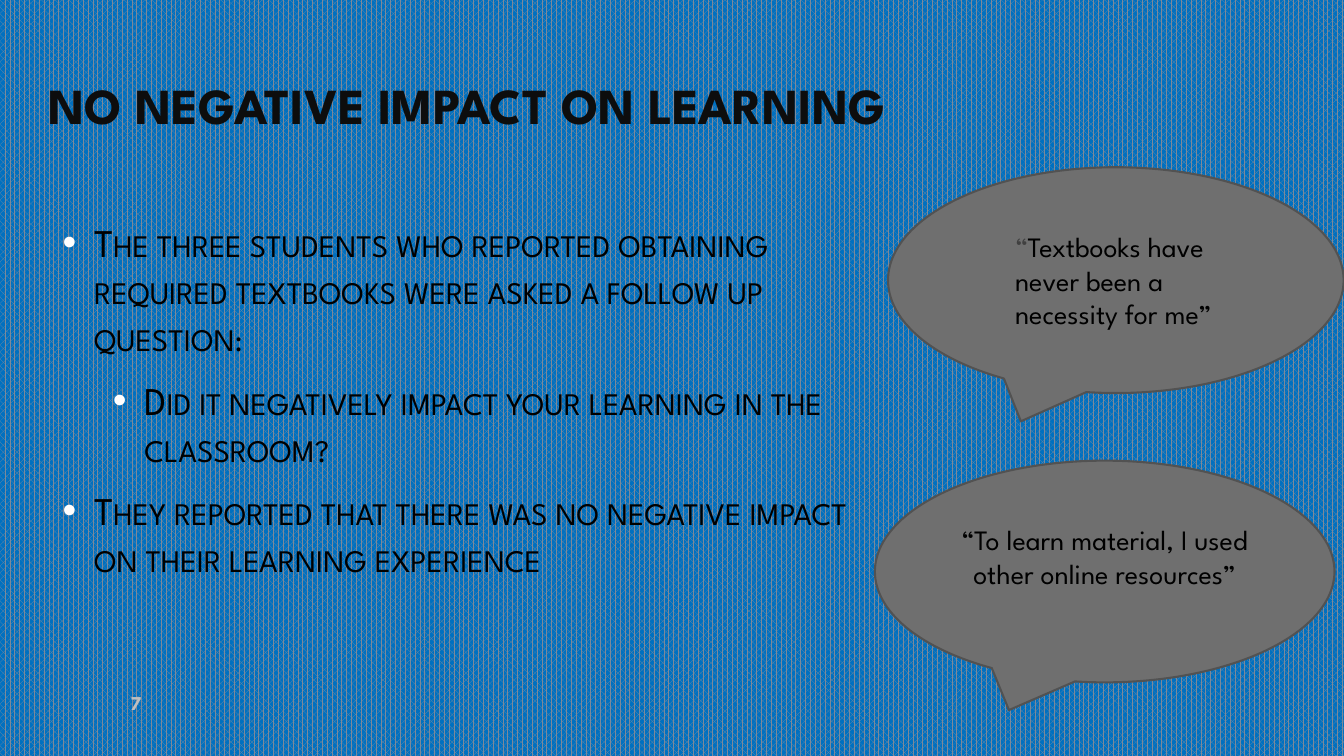
"""Builds the slide on textbooks and learning, with two student quotes."""
from dataclasses import dataclass

from lxml import etree
from pptx import Presentation
from pptx.dml.color import RGBColor
from pptx.enum.dml import MSO_PATTERN
from pptx.enum.shapes import MSO_SHAPE
from pptx.enum.text import MSO_ANCHOR, MSO_AUTO_SIZE, PP_ALIGN
from pptx.oxml.ns import qn
from pptx.util import Pt

PATTERN = MSO_PATTERN.PERCENT_70
CALLOUT = MSO_SHAPE.OVAL_CALLOUT
MIDDLE = MSO_ANCHOR.MIDDLE
NO_AUTOFIT = MSO_AUTO_SIZE.NONE
LEFT, CENTER, RIGHT = PP_ALIGN.LEFT, PP_ALIGN.CENTER, PP_ALIGN.RIGHT

TITLE = "NO NEGATIVE IMPACT ON LEARNING"
TITLE_BOX = (27.36, 0, 779.76, 149.76)
BULLETS = [
    (0, "The three students who reported obtaining required textbooks were asked a follow up question:"),
    (1, "Did it negatively impact your learning in the classroom?"),
    (0, "They reported that there was no negative impact on their learning experience"),
]
BODY_BOX = (37.44, 119.52, 587.52, 331.92)
QUOTES = [
    {"box": (634.32, 119.52, 325.44, 161.28), "align": LEFT, "indent": 36, "bottom": 3.6,
     "runs": [("“", "muted"), ("Textbooks have never been a necessity for me”", "text")]},
    {"box": (624.96, 329.04, 328.32, 158.4), "align": CENTER, "indent": 0, "bottom": 25.2,
     "runs": [("“To learn material, I used other online resources”", "text")]},
]
PAGE_NUMBER = "7"
PAGE_NUMBER_BOX = (64.8, 487.44, 43.2, 28.8)


@dataclass(frozen=True)
class Theme:
    """Colours, font and sizes of the slide."""
    font: str = "League Spartan"
    background: str = "0070C0"
    pattern: str = "7C899A"
    title: str = "0D0D0D"
    text: str = "000000"
    muted: str = "404040"
    bullet: str = "FFFFFF"
    callout: str = "6F6F6F"
    outline: str = "525252"
    number: str = "BFBFBF"
    title_size: int = 36
    body_size: int = 28
    quote_size: int = 20
    number_size: int = 14
    hanging: float = 22.5
    level_step: int = 36


THEME = Theme()


def color(value):
    """Return the colour for a hex value."""
    return RGBColor.from_string(value)


def place(shape, box):
    """Move and size a shape."""
    shape.left, shape.top, shape.width, shape.height = map(Pt, box)


def prepare_frame(shape):
    """Wrap and centre a shape's text vertically and return its frame."""
    frame = shape.text_frame
    frame.word_wrap = True
    frame.auto_size = NO_AUTOFIT
    frame.vertical_anchor = MIDDLE
    return frame


def format_run(run, size, value, bold=False):
    """Apply the slide font to a run."""
    run.font.name = THEME.font
    run.font.size = Pt(size)
    run.font.bold = bold
    run.font.color.rgb = color(value)


def add_bullet(paragraph, level):
    """Give a paragraph a coloured, hanging bullet."""
    properties = paragraph._p.get_or_add_pPr()
    properties.set("marL", str(Pt(THEME.hanging + level * THEME.level_step)))
    properties.set("indent", str(-Pt(THEME.hanging)))
    bullet_color = etree.SubElement(properties, qn("a:buClr"))
    etree.SubElement(bullet_color, qn("a:srgbClr"), val=THEME.bullet)
    etree.SubElement(properties, qn("a:buFont"), typeface="Arial")
    etree.SubElement(properties, qn("a:buChar"), char="•")


def fill_line(shape, text, align, size, value):
    """Write one bold line into a shape."""
    frame = prepare_frame(shape)
    frame.text = text
    paragraph = frame.paragraphs[0]
    paragraph.alignment = align
    format_run(paragraph.runs[0], size, value, bold=True)


def fill_body(shape):
    """Write the bulleted list in small capitals."""
    frame = prepare_frame(shape)
    frame.text = "\n".join(text for _, text in BULLETS)
    for paragraph, (level, _) in zip(frame.paragraphs, BULLETS):
        paragraph.level = level
        paragraph.space_before = Pt(THEME.body_size * 0.2)
        paragraph.space_after = Pt(6)
        add_bullet(paragraph, level)
        run = paragraph.runs[0]
        format_run(run, THEME.body_size, THEME.text)
        run._r.get_or_add_rPr().set("cap", "small")


def add_quote(slide, quote):
    """Add a speech bubble with a student's words."""
    shape = slide.shapes.add_shape(CALLOUT, *map(Pt, quote["box"]))
    shape.shadow.inherit = False
    shape.fill.solid()
    shape.fill.fore_color.rgb = color(THEME.callout)
    shape.line.color.rgb = color(THEME.outline)
    shape.line.width = Pt(1.5)
    frame = prepare_frame(shape)
    frame.margin_bottom = Pt(quote["bottom"])
    paragraph = frame.paragraphs[0]
    paragraph.alignment = quote["align"]
    paragraph._p.get_or_add_pPr().set("marL", str(Pt(quote["indent"])))
    for text, role in quote["runs"]:
        run = paragraph.add_run()
        run.text = text
        format_run(run, THEME.quote_size, getattr(THEME, role))


def main():
    """Build and save the presentation."""
    presentation = Presentation()
    presentation.slide_width, presentation.slide_height = Pt(960), Pt(540)
    slide = presentation.slides.add_slide(presentation.slide_layouts[1])
    background = slide.background.fill
    background.patterned()
    background.pattern = PATTERN
    background.fore_color.rgb = color(THEME.pattern)
    background.back_color.rgb = color(THEME.background)

    title, body = slide.placeholders
    place(title, TITLE_BOX)
    fill_line(title, TITLE, LEFT, THEME.title_size, THEME.title)
    place(body, BODY_BOX)
    fill_body(body)
    for quote in QUOTES:
        add_quote(slide, quote)
    number = slide.shapes.add_textbox(*map(Pt, PAGE_NUMBER_BOX))
    fill_line(number, PAGE_NUMBER, RIGHT, THEME.number_size, THEME.number)
    presentation.save("out.pptx")


if __name__ == "__main__":
    main()
